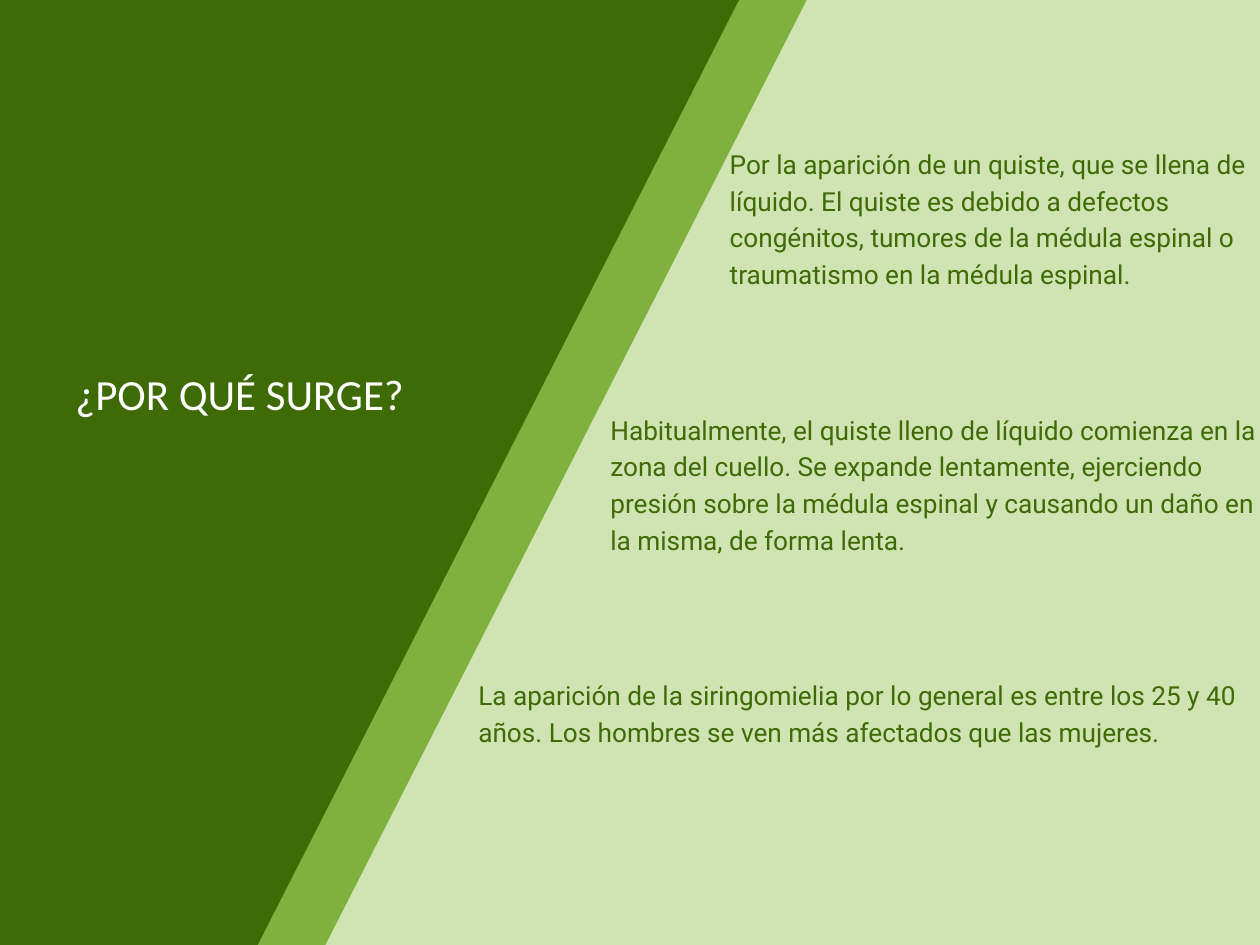
from dataclasses import dataclass

from pptx import Presentation
from pptx.dml.color import RGBColor as Color
from pptx.enum.text import MSO_ANCHOR as Anchor, MSO_AUTO_SIZE as AutoSize, PP_ALIGN as Align
from pptx.util import Inches, Pt


@dataclass(frozen=True)
class Theme:
    dark: Color = Color.from_string("3F6B06")
    mid: Color = Color.from_string("80B13F")
    pale: Color = Color.from_string("CFE4B2")
    white: Color = Color.from_string("FFFFFF")
    title_font: str = "Calibri"
    body_font: str = "Roboto"
    title_size: float = 26.2
    title_leading: float = 36.8
    body_size: float = 16
    body_leading: float = 22.4


THEME = Theme()
WIDTH, HEIGHT = Inches(10.67), Inches(8)

# Boxes are left, top, width, height in percent of the slide's size.
PANEL_BOX = (40.96, -12.88, 78.16, 153.88)
STRIPE_BOX = (39.83, -8.12, 4.78, 116.38)
TITLE_BOX = (2.06, 38, 33.93, 5.88)
CAUSES_TOP, CAUSES_STEP = 15.12, 28.12

# Left, width and height in percent, then the wording, from top to bottom.
CAUSES = [
    (57.92, 42.08, 18.62,
     "Por la aparición de un quiste, que se llena de líquido. El quiste es debido a "
     "defectos congénitos, tumores de la médula espinal o traumatismo en la médula espinal."),
    (48.45, 51.45, 18.62,
     "Habitualmente, el quiste lleno de líquido comienza en la zona del cuello. Se expande "
     "lentamente, ejerciendo presión sobre la médula espinal y causando un daño en la misma, "
     "de forma lenta."),
    (37.96, 61.29, 11,
     "La aparición de la siringomielia por lo general es entre los 25 y 40 años. Los hombres "
     "se ven más afectados que las mujeres."),
]


def set_all(target, values):
    for name, value in values.items():
        setattr(target, name, value)


def to_lengths(box):
    return [round(share * side / 100) for share, side in zip(box, (WIDTH, HEIGHT) * 2)]


def add_band(page, box, angle, color):
    """Draw a plain rectangular outline, tilted about its centre."""
    left, top, width, height = to_lengths(box)
    right, bottom = left + width, top + height
    outline = page.shapes.build_freeform(left, top)
    outline.add_line_segments([(right, top), (right, bottom), (left, bottom)])
    band = outline.convert_to_shape()
    band.rotation = angle
    band.shadow.inherit = False
    band.fill.solid()
    band.fill.fore_color.rgb = color
    band.line.fill.background()


def write_text(frame, text, font, size, leading, color, align):
    set_all(frame, {
        "text": text, "word_wrap": True, "vertical_anchor": Anchor.TOP,
        "auto_size": AutoSize.SHAPE_TO_FIT_TEXT,
        "margin_left": 0, "margin_top": 0, "margin_right": 0, "margin_bottom": 0,
    })
    para = frame.paragraphs[0]
    set_all(para, {"alignment": align, "line_spacing": Pt(leading), "space_before": Pt(0)})
    span = para.runs[0]
    set_all(span.font, {"name": font, "size": Pt(size)})
    span.font.color.rgb = color


def add_backdrop(page):
    page.background.fill.solid()
    page.background.fill.fore_color.rgb = THEME.dark
    add_band(page, PANEL_BOX, 26.9, THEME.pale)
    add_band(page, STRIPE_BOX, 27, THEME.mid)


def place_title(page, box, text):
    title = page.shapes.title
    set_all(title, dict(zip(("left", "top", "width", "height"), to_lengths(box))))
    write_text(title.text_frame, text, THEME.title_font, THEME.title_size,
               THEME.title_leading, THEME.white, Align.CENTER)
    title.element.getparent().append(title.element)  # in front of the backdrop


def add_cause(page, box, text):
    note = page.shapes.add_textbox(*to_lengths(box))
    write_text(note.text_frame, text, THEME.body_font, THEME.body_size,
               THEME.body_leading, THEME.dark, Align.LEFT)


def main():
    deck = Presentation()
    set_all(deck, {"slide_width": WIDTH, "slide_height": HEIGHT})
    page = deck.slides.add_slide(deck.slide_layouts.get_by_name("Title Only"))
    add_backdrop(page)
    place_title(page, TITLE_BOX, "¿POR QUÉ SURGE?")
    for row, (left, width, height, text) in enumerate(CAUSES):
        add_cause(page, (left, CAUSES_TOP + row * CAUSES_STEP, width, height), text)
    deck.save("out.pptx")


if __name__ == "__main__":
    main()
